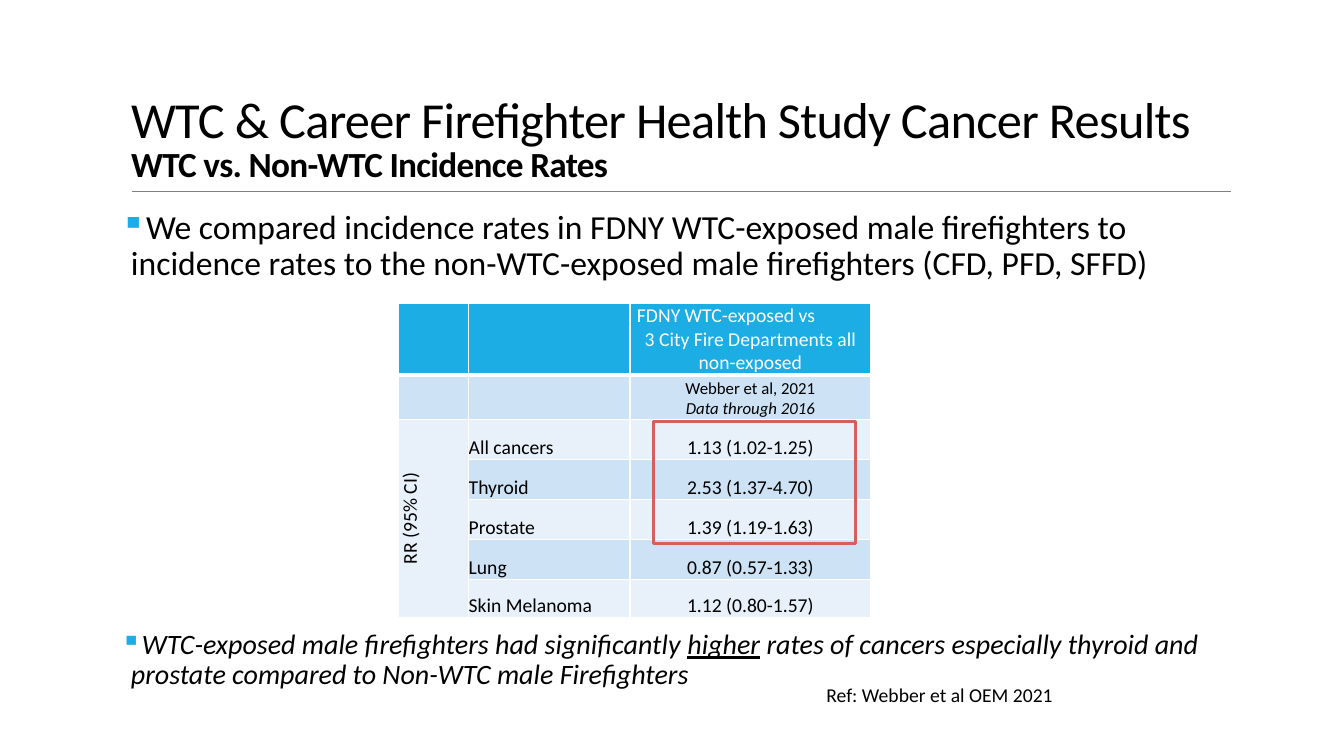
from lxml import etree
from pptx import Presentation
from pptx.dml.color import RGBColor
from pptx.enum import shapes, text
from pptx.oxml import ns
from pptx.util import Pt

# Content
TITLE = "WTC & Career Firefighter Health Study Cancer Results "
SUB = "WTC vs. Non-WTC Incidence Rates"
INTRO = [("We compared incidence rates in FDNY WTC-exposed male firefighters to "
          "incidence rates to the non-WTC-exposed male firefighters (CFD, PFD, SFFD)", {})]
FINDING = [("WTC-exposed male firefighters had significantly ", {}),
           ("higher", {"underline": True}),
           (" rates of cancers especially thyroid and prostate compared to "
            "Non-WTC male Firefighters", {})]
HEAD = ["FDNY WTC-exposed vs", "3 City Fire Departments all non-exposed"]
STUDY = ["Webber et al, 2021", "Data through 2016"]
RATIO = "RR (95% CI)"
RATES = [("All cancers", "1.13 (1.02-1.25)"),
         ("Thyroid", "2.53 (1.37-4.70)"),
         ("Prostate", "1.39 (1.19-1.63)"),
         ("Lung", "0.87 (0.57-1.33)"),
         ("Skin Melanoma", "1.12 (0.80-1.57)")]
REF = "Ref: Webber et al OEM 2021"

THEME = {"font": "Calibri", "ink": "000000", "white": "FFFFFF", "head": "1CADE4",
         "bands": ("CDE3F5", "E8F1FA"), "rule": "808080", "mark": "D65E5B",
         "title": 36, "sub": 25.2, "intro": 24, "finding": 20, "cell": 14, "study": 12}

# Places, in points
LEFT, WIDE = 86.4, 792
TABLE = (284.4, 216.7)
COLS = (50.4, 115.2, 172.1)
ROWS = (51.4, 31.5, 28.6, 28.6, 28.6, 28.6, 27.4)
GAP = 246  # room for the table between the two bullets

CENTER, START = text.PP_ALIGN.CENTER, text.PP_ALIGN.LEFT
MIDDLE, BOTTOM = text.MSO_ANCHOR.MIDDLE, text.MSO_ANCHOR.BOTTOM


def rgb(code):
    return RGBColor.from_string(code)


def box(*nums):
    return [Pt(n) for n in nums]


def apply(item, **vals):
    for key, val in vals.items():
        setattr(item, key, val)


def add_run(para, words, size, ink=THEME["ink"], **vals):
    run = para.add_run()
    run.text = words
    apply(run.font, name=THEME["font"], size=Pt(size), **vals)
    run.font.color.rgb = rgb(ink)
    return run


def sub(parent, tag, **vals):
    return etree.SubElement(parent, ns.qn(tag), vals)


def add_bullet(para, runs, size, before, **vals):
    apply(para, line_spacing=0.9, space_before=Pt(before), space_after=Pt(2))
    props = para._p.get_or_add_pPr()
    props.set("marL", str(Pt(7.2)))
    props.set("indent", str(-Pt(7.2)))
    sub(sub(props, "a:buClr"), "a:srgbClr", val=THEME["head"])
    sub(props, "a:buChar", char="▪")
    for words, form in runs:
        add_run(para, words, size, **vals, **form)


def style_cell(cell, fill, low=1):
    apply(cell, margin_left=0, margin_right=0, margin_top=0, margin_bottom=0)
    props = cell._tc.get_or_add_tcPr()
    for side, width in (("L", 1), ("R", 1), ("T", 1), ("B", low)):
        line = sub(props, f"a:ln{side}", w=str(Pt(width)))
        sub(sub(line, "a:solidFill"), "a:srgbClr", val=THEME["white"])
    cell.fill.solid()
    cell.fill.fore_color.rgb = rgb(fill)


def fill_cell(cell, lines, size, align=CENTER, anchor=BOTTOM, ink=THEME["ink"]):
    cell.vertical_anchor = anchor
    paras = [cell.text_frame.paragraphs[0]]
    paras += [cell.text_frame.add_paragraph() for _ in lines[1:]]
    for para, words in zip(paras, lines):
        para.alignment = align
        add_run(para, words, size, ink)
    return paras


deck = Presentation()
apply(deck, slide_width=Pt(960), slide_height=Pt(540))
slide = deck.slides.add_slide(deck.slide_layouts[5])
parts = slide.shapes

# Title
title = parts.title
apply(title, **dict(zip(("left", "top", "width", "height"), box(LEFT, 20.9, WIDE, 114.5))))
frame = title.text_frame
apply(frame, word_wrap=True, vertical_anchor=BOTTOM, auto_size=text.MSO_AUTO_SIZE.NONE)
para = frame.paragraphs[0]
apply(para, alignment=START, line_spacing=0.85)
runs = [add_run(para, TITLE, THEME["title"])]
para.add_line_break()
runs.append(add_run(para, SUB, THEME["sub"], bold=True))
for run in runs:
    run.font._element.set("spc", "-50")

# Rule under the title
rule = parts.add_connector(shapes.MSO_CONNECTOR.STRAIGHT, *box(94.5, 136.8, 879, 136.8))
rule.line.color.rgb = rgb(THEME["rule"])
rule.line.width = Pt(0.5)
sub(rule._element.spPr, "a:effectLst")

# Bullets above and below the table
frame = parts.add_textbox(*box(LEFT, 146.9, WIDE, 355.7)).text_frame
apply(frame, word_wrap=True, margin_left=0, margin_right=0)
add_bullet(frame.paragraphs[0], INTRO, THEME["intro"], 0)
add_bullet(frame.add_paragraph(), FINDING, THEME["finding"], GAP, italic=True)

# Table of rates
grid = parts.add_table(len(ROWS), len(COLS), *box(*TABLE, sum(COLS), sum(ROWS))).table
for col, width in zip(grid.columns, COLS):
    col.width = Pt(width)
for i, (row, height) in enumerate(zip(grid.rows, ROWS)):
    row.height = Pt(height)
    for cell in row.cells:
        if i:
            style_cell(cell, THEME["bands"][(i - 1) % 2])
        else:
            style_cell(cell, THEME["head"], 3)

size = THEME["cell"]
paras = fill_cell(grid.cell(0, 2), HEAD, size, anchor=MIDDLE, ink=THEME["white"])
paras[0].alignment = START
paras[0]._p.get_or_add_pPr().set("marL", str(Pt(5)))
paras = fill_cell(grid.cell(1, 2), STUDY, THEME["study"])
paras[1].runs[0].font.italic = True

ratio = grid.cell(2, 0)
ratio.merge(grid.cell(len(ROWS) - 1, 0))
fill_cell(ratio, [RATIO], size, anchor=MIDDLE)
ratio._tc.get_or_add_tcPr().set("vert", "vert270")
for i, (cancer, rate) in enumerate(RATES, 2):
    fill_cell(grid.cell(i, 1), [cancer], size, START)
    fill_cell(grid.cell(i, 2), [rate], size)

# Frame around the significant rates
mark = parts.add_shape(shapes.MSO_SHAPE.RECTANGLE, *box(466.6, 301, 144.7, 87.1))
mark.shadow.inherit = False
mark.fill.background()
mark.line.color.rgb = rgb(THEME["mark"])
mark.line.width = Pt(2.25)

# Reference
frame = parts.add_textbox(*box(583.2, 484.6, 277.9, 24.5)).text_frame
frame.word_wrap = True
add_run(frame.paragraphs[0], REF, size)

deck.save("out.pptx")
